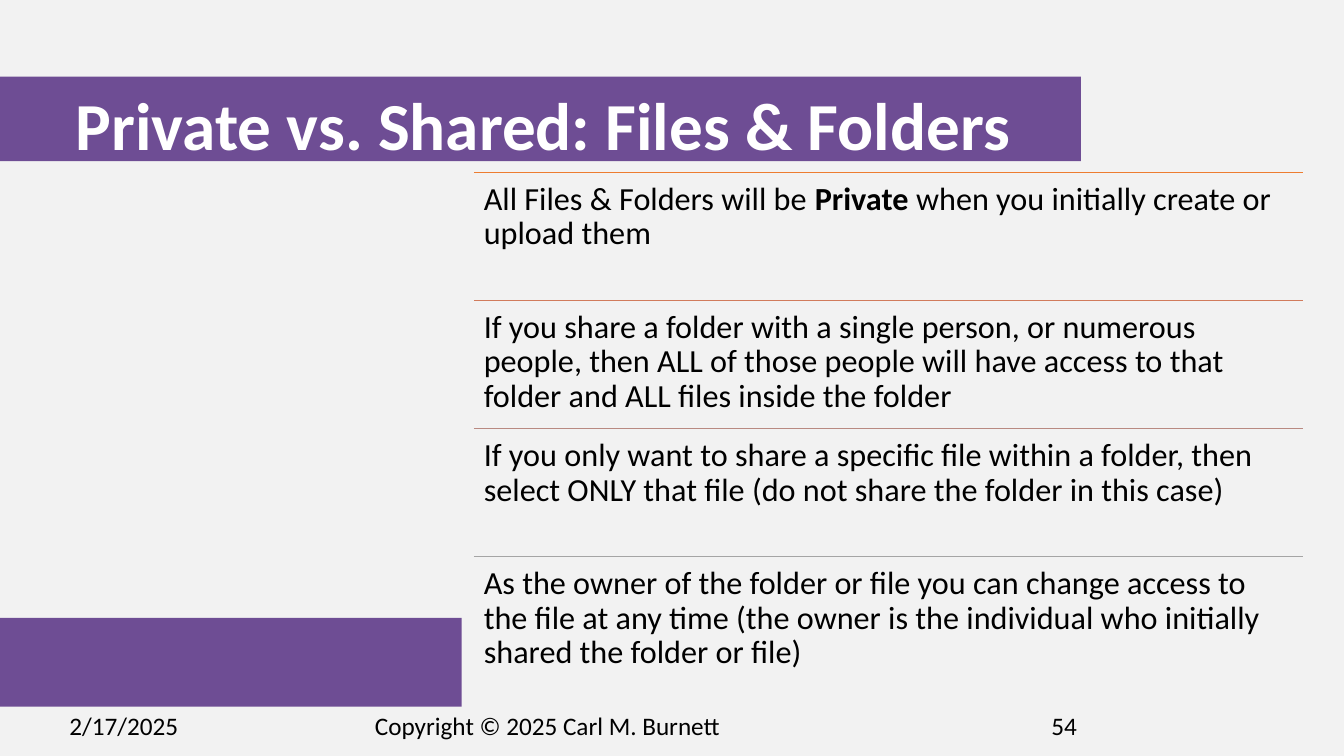
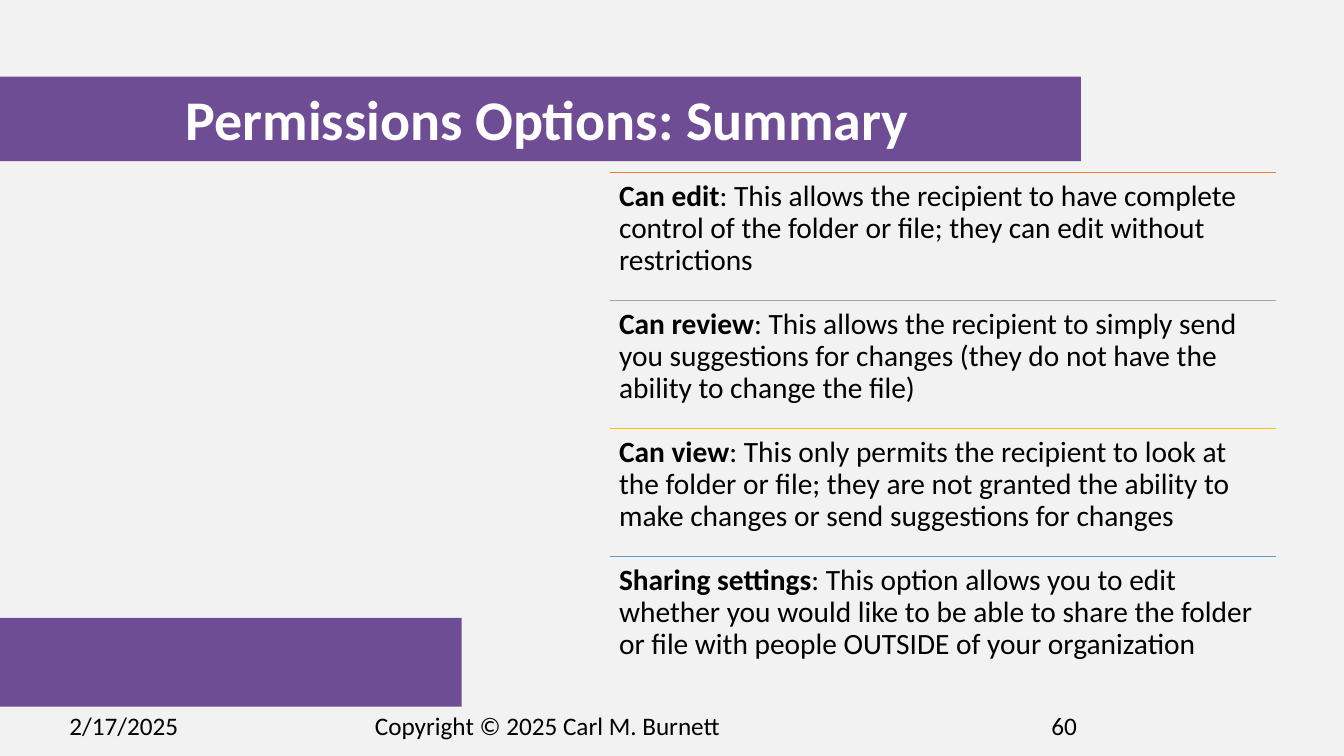
"""Build two slides about sharing files and folders."""
import pptx
import pptx.dml.color
import pptx.enum.shapes
import pptx.enum.text
import pptx.oxml
import pptx.util

FONT = "Calibri"
BACKGROUND, PURPLE, WHITE, BLACK = "F2F2F2", "6E4D94", "FFFFFF", "000000"
BANDS = [(0, 0.76, 10.72, 0.84), (0, 6.13, 4.58, 0.88)]
ROW_TOP, ROW_HEIGHT = 1.71, 1.27
FOOTER_TOP, FOOTER_HEIGHT = 7, 0.4
DATE = "2/17/2025"
COPYRIGHT = "Copyright © 2025 Carl M. Burnett"

SLIDES = [
    {
        "title": "Private vs. Shared: Files & Folders",
        "title_box": (0.31, 0.87, 10.16, 1.68),
        "title_size": 48,
        "left": 4.7, "width": 8.22, "size": 23, "inset": 0.1,
        "number": "54",
        "rows": [
            ("ED7D31", "All Files & Folders will be *Private* when you initially create or upload them"),
            ("D17B5C", "If you share a folder with a single person, or numerous people, then ALL of "
                       "those people will have access to that folder and ALL files inside the folder"),
            ("B98A82", "If you only want to share a specific file within a folder, then select ONLY "
                       "that file (do not share the folder in this case)"),
            ("A5A5A5", "As the owner of the folder or file you can change access to the file at any "
                       "time (the owner is the individual who initially shared the folder or file)"),
        ],
    },
    {
        "title": "Permissions Options: Summary",
        "title_box": (0.4, 0.86, 10.05, 0.85),
        "title_size": 40,
        "left": 6.05, "width": 6.61, "size": 21, "inset": 0.09,
        "number": "60",
        "rows": [
            ("ED7D31", "*Can edit*: This allows the recipient to have complete control of the folder "
                       "or file; they can edit without restrictions"),
            ("A5A5A5", "*Can review*: This allows the recipient to simply send you suggestions for "
                       "changes (they do not have the ability to change the file)"),
            ("FFC000", "*Can view*: This only permits the recipient to look at the folder or file; "
                       "they are not granted the ability to make changes or send suggestions for changes"),
            ("5B9BD5", "*Sharing settings*: This option allows you to edit whether you would like to be "
                       "able to share the folder or file with people OUTSIDE of your organization"),
        ],
    },
]


def color(value):
    """Turn a hex string into a colour."""
    return pptx.dml.color.RGBColor.from_string(value)


def inches(*values):
    """Turn numbers into a list of lengths."""
    return [pptx.util.Inches(value) for value in values]


def write(shape, text, size, fill=BLACK, bold=False, align="LEFT", spacing=1.0, insets=(0.1, 0.05)):
    """Fill a shape with text in which asterisks enclose bold words."""
    frame = shape.text_frame
    frame.word_wrap = True
    frame.auto_size = pptx.enum.text.MSO_AUTO_SIZE.NONE
    frame.vertical_anchor = pptx.enum.text.MSO_ANCHOR.TOP
    frame.margin_left = frame.margin_right = pptx.util.Inches(insets[0])
    frame.margin_top = frame.margin_bottom = pptx.util.Inches(insets[1])
    paragraph = frame.paragraphs[0]
    paragraph.alignment = getattr(pptx.enum.text.PP_ALIGN, align)
    paragraph.line_spacing = spacing
    for index, part in enumerate(text.split("*")):
        if part:
            run = paragraph.add_run()
            run.text = part
            run.font.name = FONT
            run.font.size = pptx.util.Pt(size)
            run.font.bold = bold or index % 2 == 1
            run.font.color.rgb = color(fill)


def add_text(slide, box, text, size, **style):
    """Add a text box at the given place."""
    write(slide.shapes.add_textbox(*inches(*box)), text, size, **style)


def add_rule(slide, left, top, width, fill):
    """Add a thin horizontal line."""
    rule = slide.shapes.add_connector(
        pptx.enum.shapes.MSO_CONNECTOR.STRAIGHT, *inches(left, top, left + width, top))
    rule.line.color.rgb = color(fill)
    rule.line.width = pptx.util.Pt(0.5)
    properties = rule.element.spPr
    properties.append(pptx.oxml.parse_xml(
        '<a:effectLst xmlns:a="http://schemas.openxmlformats.org/drawingml/2006/main"/>'))


def style_master(master, slide):
    """Set the shared background and move the purple bands to the master."""
    master.background.fill.solid()
    master.background.fill.fore_color.rgb = color(BACKGROUND)
    for index, box in enumerate(BANDS):
        band = slide.shapes.add_shape(pptx.enum.shapes.MSO_SHAPE.RECTANGLE, *inches(*box))
        band.shadow.inherit = False
        band.fill.solid()
        band.fill.fore_color.rgb = color(PURPLE)
        band.line.fill.background()
        band.name = f"Band {index + 1}"
        band.element.nvSpPr.cNvPr.set("id", str(100 + index))
        master.shapes.element.insert(2, band.element)


def fill_slide(slide, content):
    """Place the title, the ruled rows and the footer."""
    title = slide.shapes.title
    title.left, title.top, title.width, title.height = inches(*content["title_box"])
    write(title, content["title"], content["title_size"], fill=WHITE, bold=True,
          align="CENTER", spacing=0.9)
    left, width = content["left"], content["width"]
    for index, (rule_color, text) in enumerate(content["rows"]):
        top = ROW_TOP + index * ROW_HEIGHT
        add_rule(slide, left, top, width, rule_color)
        add_text(slide, (left, top, width, ROW_HEIGHT), text, content["size"],
                 spacing=0.9, insets=(content["inset"], content["inset"]))
    footer = [(0.59, 2.41, DATE), (3.62, 6.1, COPYRIGHT), (10.33, 2.41, content["number"])]
    for left, width, text in footer:
        add_text(slide, (left, FOOTER_TOP, width, FOOTER_HEIGHT), text, 18)


def main():
    """Build and save the presentation."""
    presentation = pptx.Presentation()
    presentation.slide_width, presentation.slide_height = inches(13.33, 7.5)
    title_only = presentation.slide_layouts[5]
    slides = [presentation.slides.add_slide(title_only) for _ in SLIDES]
    style_master(presentation.slide_master, slides[0])
    for slide, content in zip(slides, SLIDES):
        fill_slide(slide, content)
    presentation.save("out.pptx")


if __name__ == "__main__":
    main()
